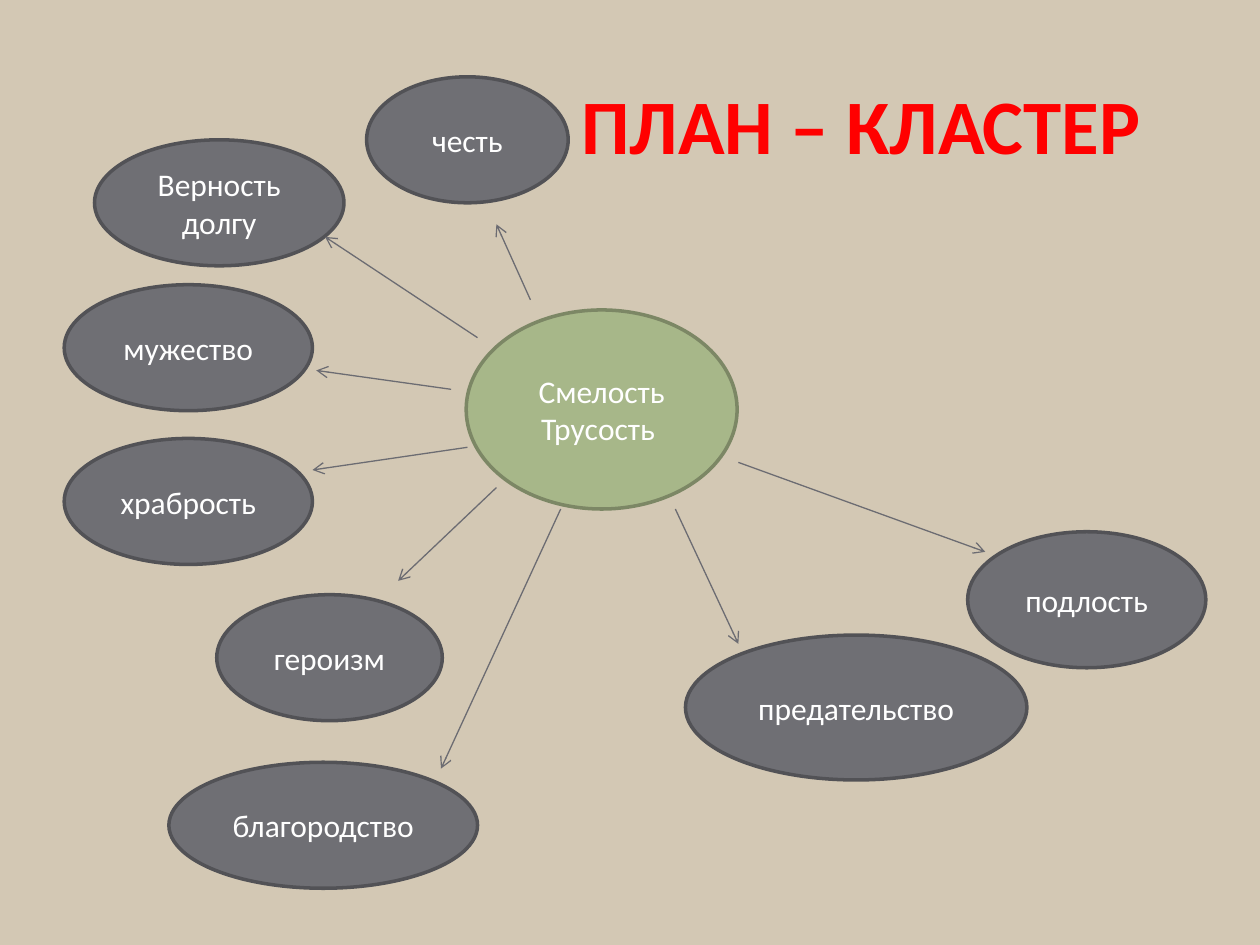
from lxml import etree
from pptx import Presentation
from pptx.dml.color import RGBColor
from pptx.enum import shapes, text
from pptx.oxml.ns import qn
from pptx.util import Inches, Pt

SAND = RGBColor(0xD3, 0xC8, 0xB4)
RED = RGBColor(0xFF, 0x00, 0x00)
WHITE = RGBColor(0xFF, 0xFF, 0xFF)
GREEN = RGBColor(0xA7, 0xB7, 0x89)
MOSS = RGBColor(0x7C, 0x87, 0x65)
GREY = RGBColor(0x6F, 0x6F, 0x74)
DARK = RGBColor(0x52, 0x52, 0x56)
SLATE = RGBColor(0x6C, 0x6C, 0x72)


def write(shape, words, size=18, color=WHITE, bold=False):
    frame = shape.text_frame
    frame.word_wrap = True
    frame.vertical_anchor = text.MSO_ANCHOR.MIDDLE
    frame.text = words
    for para in frame.paragraphs:
        para.alignment = text.PP_ALIGN.CENTER
        font = para.runs[0].font
        font.name = "Calibri"
        font.size = Pt(size)
        font.bold = bold
        font.color.rgb = color


deck = Presentation()
deck.slide_width = Inches(10)
deck.slide_height = Inches(7.5)
slide = deck.slides.add_slide(deck.slide_layouts[6])
slide.background.fill.solid()
slide.background.fill.fore_color.rgb = SAND

title = slide.shapes.add_textbox(Inches(3.89), Inches(0.36), Inches(5.89), Inches(1.25))
write(title, "ПЛАН – КЛАСТЕР", size=44, color=RED, bold=True)

ovals = [
    ("Смелость\nТрусость ", 3.7, 2.46, 2.15, 1.58, GREEN, MOSS),
    ("храбрость", 0.51, 3.48, 1.97, 1, GREY, DARK),
    ("героизм", 1.72, 4.72, 1.79, 1, GREY, DARK),
    ("предательство", 5.44, 5.04, 2.71, 1.15, GREY, DARK),
    ("подлость", 7.68, 4.22, 1.89, 1.08, GREY, DARK),
    ("мужество", 0.51, 2.26, 1.97, 1, GREY, DARK),
    ("Верность долгу", 0.75, 1.11, 1.98, 1, GREY, DARK),
    ("благородство", 1.34, 6.05, 2.45, 1, GREY, DARK),
    ("честь", 2.91, 0.61, 1.6, 1, GREY, DARK),
]
for words, left, top, width, height, fill, edge in ovals:
    oval = slide.shapes.add_shape(
        shapes.MSO_SHAPE.OVAL, Inches(left), Inches(top), Inches(width), Inches(height)
    )
    oval.shadow.inherit = False
    oval.fill.solid()
    oval.fill.fore_color.rgb = fill
    oval.line.color.rgb = edge
    oval.line.width = Pt(2)
    write(oval, words)

arrows = [
    (5.86, 3.67, 7.82, 4.38),
    (5.36, 4.04, 5.86, 5.11),
    (3.94, 3.87, 3.16, 4.61),
    (3.71, 3.55, 2.48, 3.73),
    (3.79, 2.68, 2.58, 1.88),
    (3.58, 3.09, 2.51, 2.94),
    (4.45, 4.04, 3.5, 6.1),
    (4.21, 2.38, 3.94, 1.78),
]
for ends in arrows:
    arrow = slide.shapes.add_connector(
        shapes.MSO_CONNECTOR.STRAIGHT, *[Inches(end) for end in ends]
    )
    arrow.line.color.rgb = SLATE
    arrow.line.width = Pt(0.75)
    props = arrow.element.spPr
    etree.SubElement(props.find(qn("a:ln")), qn("a:tailEnd"), type="arrow")
    etree.SubElement(props, qn("a:effectLst"))

deck.save("out.pptx")
